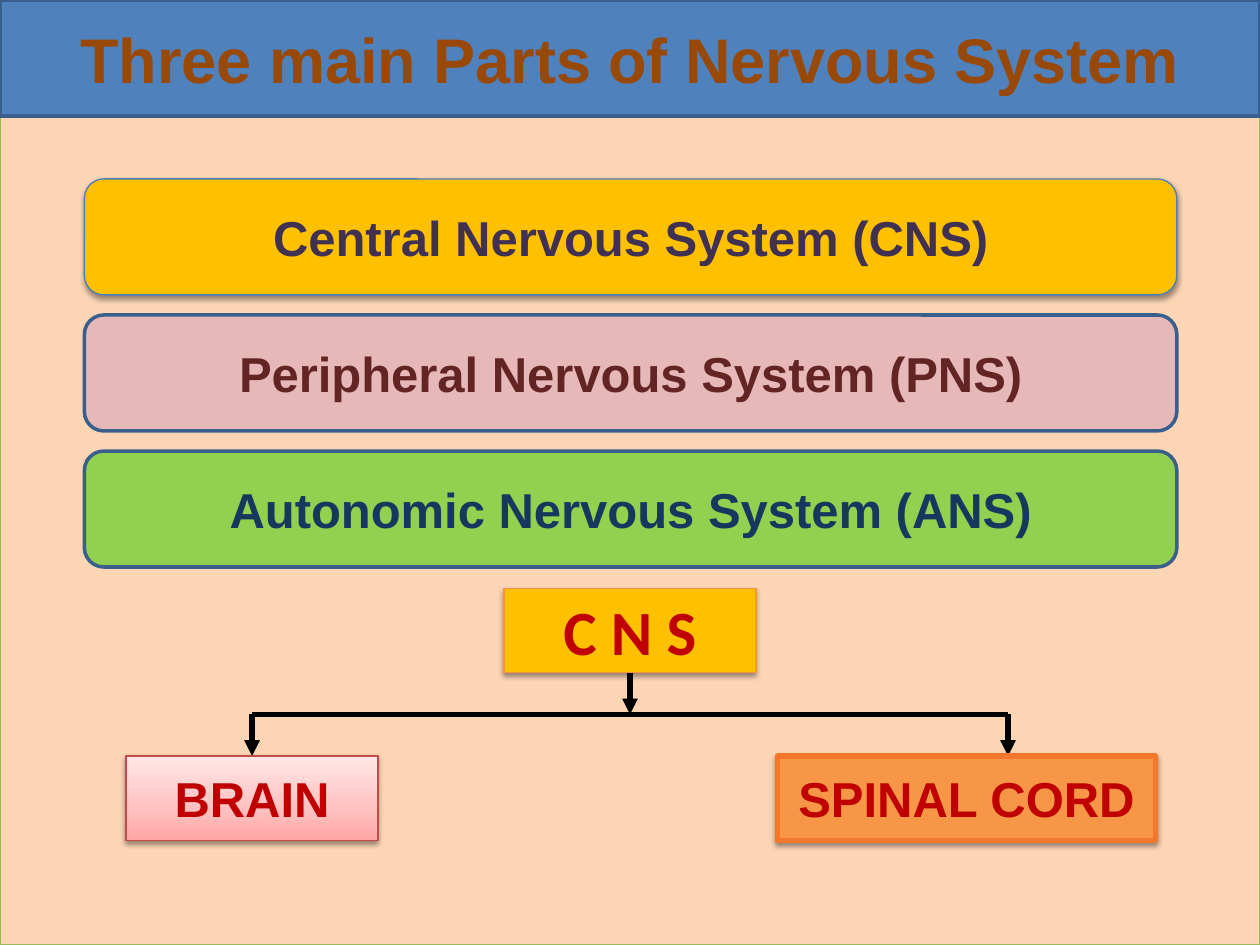
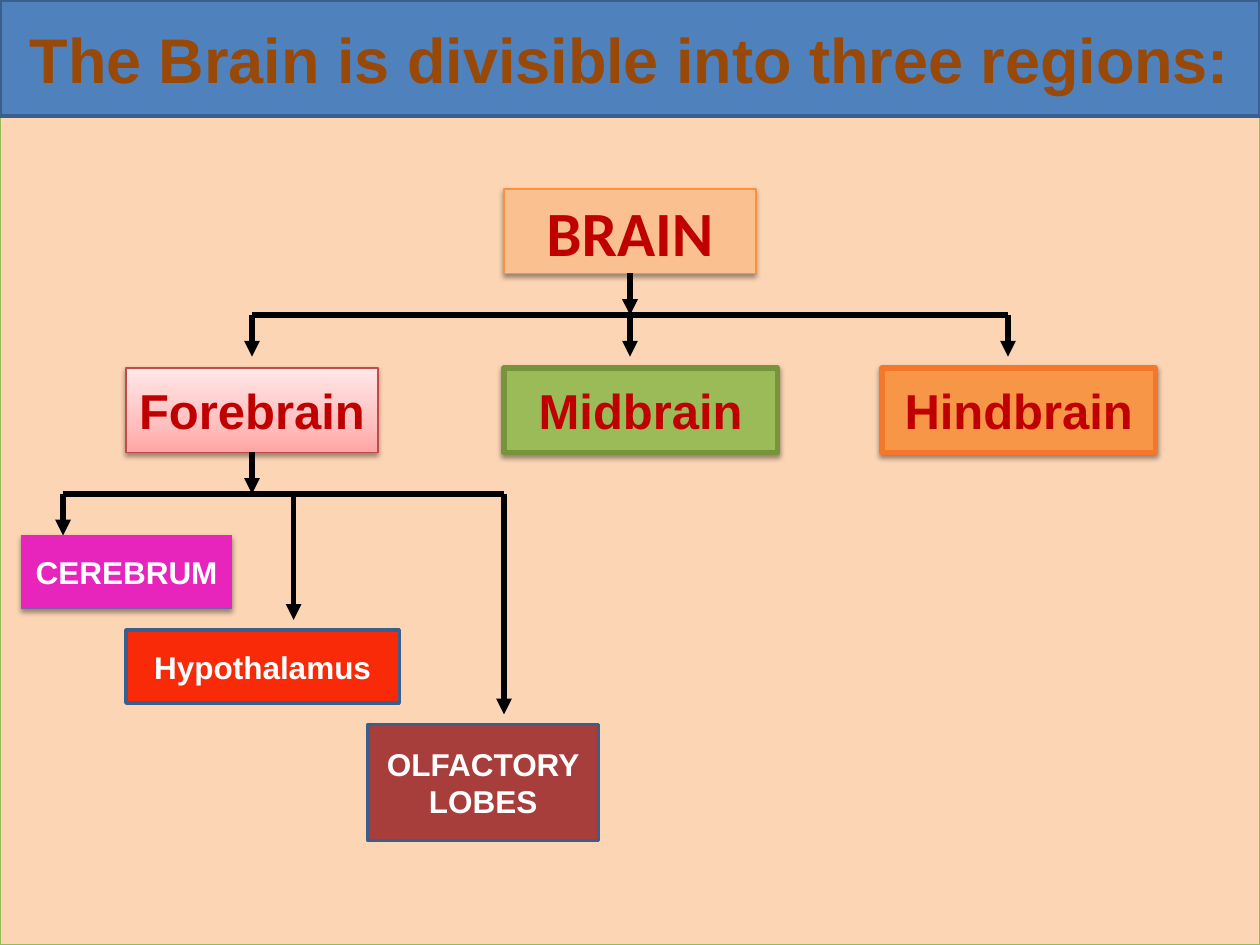
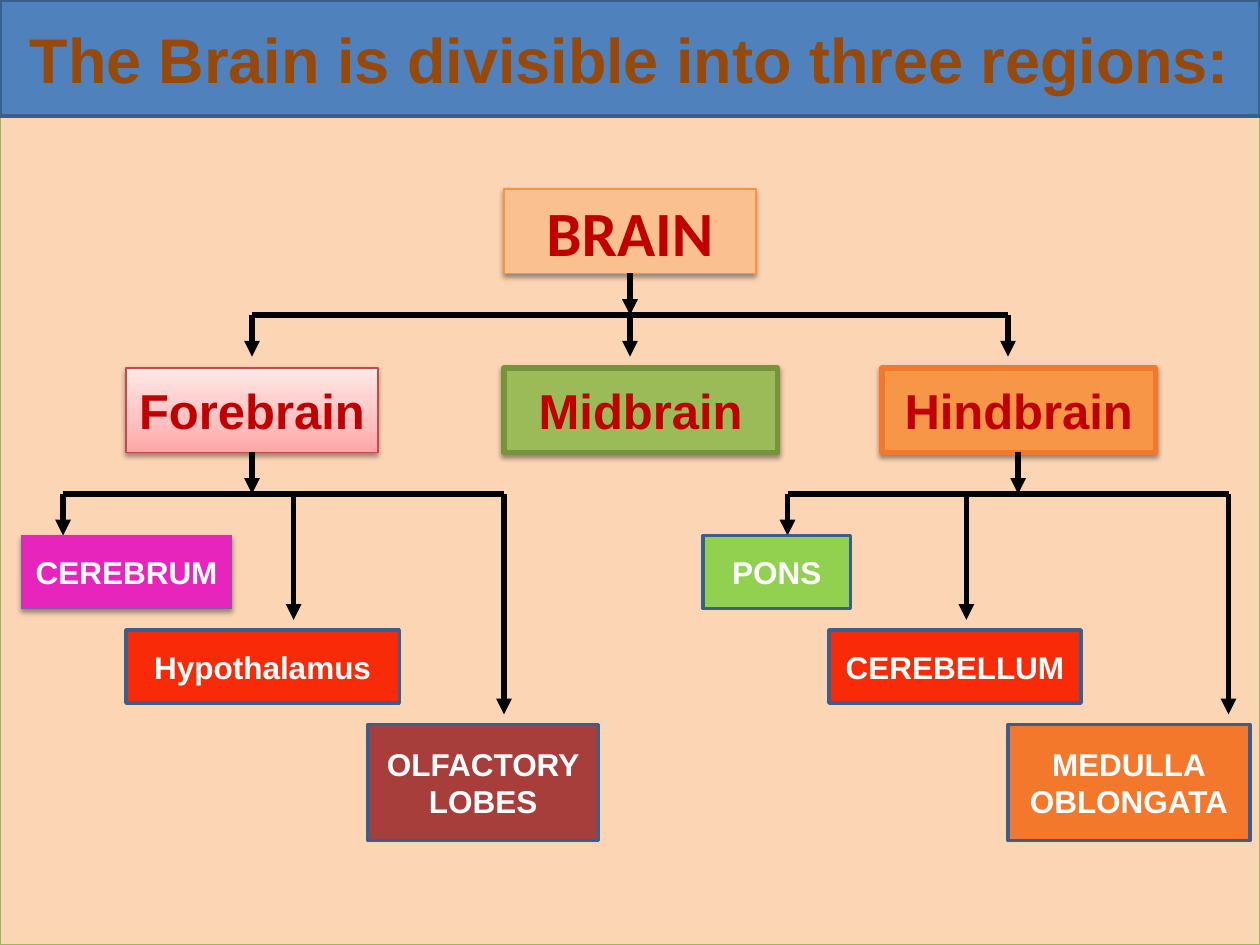
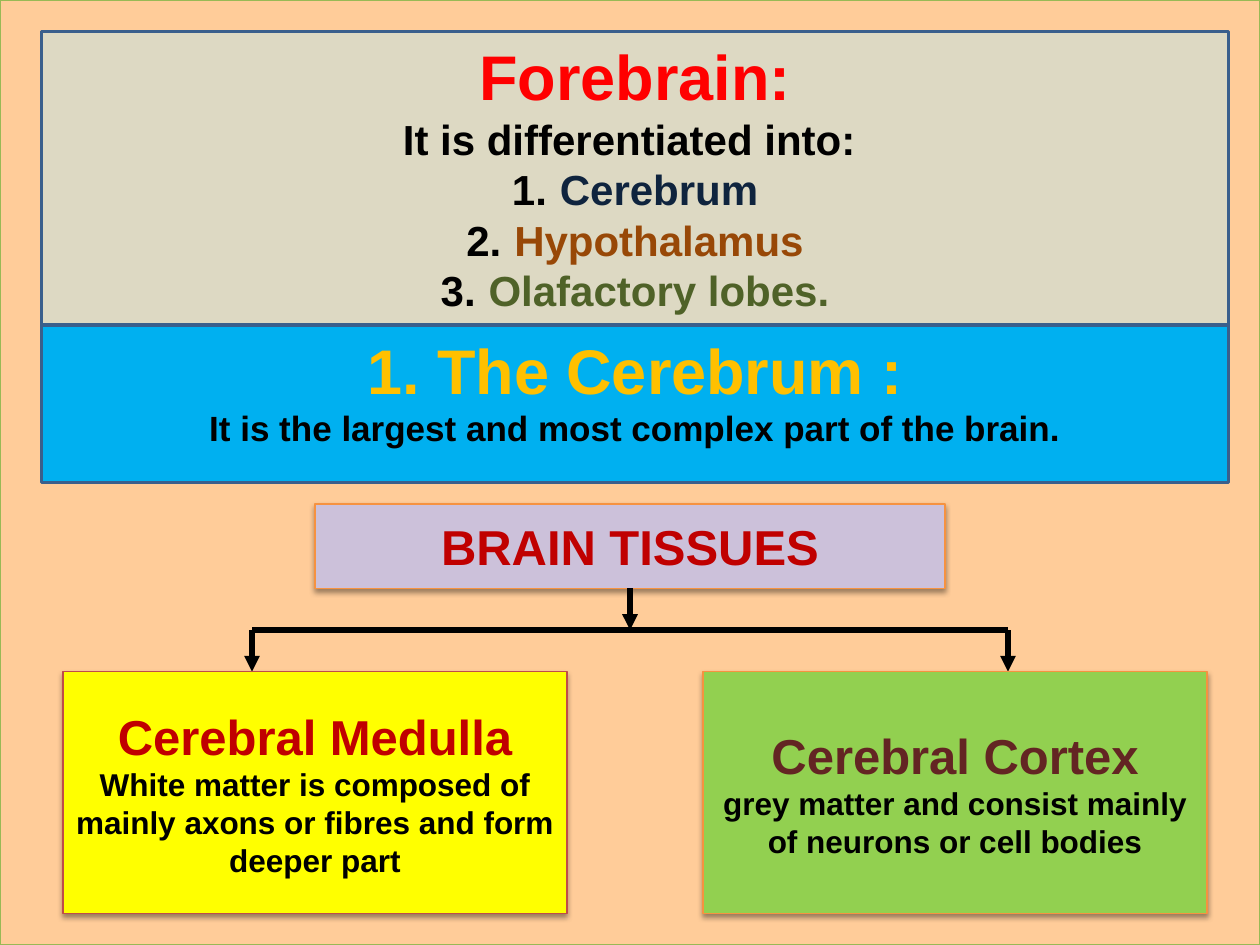
from lxml import etree
from pptx import Presentation
from pptx.dml.color import RGBColor
from pptx.enum.shapes import MSO_CONNECTOR, MSO_SHAPE
from pptx.enum.text import MSO_ANCHOR, MSO_AUTO_SIZE, PP_ALIGN
from pptx.oxml.ns import qn
from pptx.util import Inches, Pt

RECT, ROUND = MSO_SHAPE.RECTANGLE, MSO_SHAPE.ROUNDED_RECTANGLE
STRAIGHT = MSO_CONNECTOR.STRAIGHT
TOP, MIDDLE = MSO_ANCHOR.TOP, MSO_ANCHOR.MIDDLE
CENTER, NO_FIT = PP_ALIGN.CENTER, MSO_AUTO_SIZE.NONE
TITLE_ONLY, BLANK = 5, 6

BLACK, WHITE, RED, BROWN = "000000", "FFFFFF", "C00000", "984807"
PEACH, GOLD, GREEN, ORANGE, SCARLET = "FCD5B5", "FFC000", "92D050", "F79646", "F82A08"
PINK = ((0, "FFA6A5"), (35, "FFC0BF"), (100, "FFE7E7"))

# Edges: colour, width in points, shadow
NAVY = ("3A5F8C", 2, False)
AMBER = ("F69240", 0.75, True)
ROSE = ("BF4C48", 0.75, True)
LEAF = ("98B955", 0.75, True)
BLUE = ("4B7EBC", 0.75, True)
PLUM = ("7D60A0", 0.75, True)
OLIVE = ("77933C", 3, True)
RUST = ("F4782C", 3, True)

STEP = 0.33


def rgb(code):
    return RGBColor.from_string(code)


def child(parent, tag, **attrs):
    node = etree.SubElement(parent, qn(tag))
    for key, value in attrs.items():
        node.set(key, str(value))
    return node


def fade(shape, stops):
    """Fill with a gradient that rises from the bottom edge."""
    shape.fill.gradient()
    shape.fill.gradient_angle = 90
    holder = next(shape._element.spPr.iter(qn("a:gsLst")))
    holder.clear()
    for spot, code in stops:
        child(child(holder, "a:gs", pos=spot * 1000), "a:srgbClr", val=code)


def paint(shape, fill, edge):
    code, width, shaded = edge
    shape.shadow.inherit = False
    if isinstance(fill, str):
        shape.fill.solid()
        shape.fill.fore_color.rgb = rgb(fill)
    else:
        fade(shape, fill)
    shape.line.color.rgb = rgb(code)
    shape.line.width = Pt(width)
    if shaded:
        effect = shape._element.spPr.find(qn("a:effectLst"))
        shadow = child(effect, "a:outerShdw", blurRad=Pt(3.1), dist=Pt(1.6),
                       dir=90 * 60000, rotWithShape=0)
        child(child(shadow, "a:srgbClr", val=BLACK), "a:alpha", val=38000)


def write(shape, paras, face="Arial", anchor=MIDDLE):
    """Fill the shape with paragraphs, each a list of (text, size, colour)."""
    frame = shape.text_frame
    frame.word_wrap, frame.auto_size, frame.vertical_anchor = True, NO_FIT, anchor
    for i, runs in enumerate(paras):
        para = frame.add_paragraph() if i else frame.paragraphs[0]
        para.alignment = CENTER
        for text, size, code in runs:
            run = para.add_run()
            run.text = text
            run.font.color.rgb = rgb(code)
            for key, value in {"name": face, "size": Pt(size), "bold": True}.items():
                setattr(run.font, key, value)


def block(slide, box, fill, edge, paras=(), kind=RECT, **style):
    shape = slide.shapes.add_shape(kind, *map(Inches, box))
    paint(shape, fill, edge)
    write(shape, paras, **style)
    return shape


def label(slide, box, fill, edge, text, size=28, code=RED, **style):
    """A block with one style of text, one paragraph to a line."""
    paras = [[(line, size, code)] for line in text.split("\n")]
    return block(slide, box, fill, edge, paras, **style)


def rule(slide, x1, y1, x2, y2, arrow=True):
    line = slide.shapes.add_connector(STRAIGHT, *map(Inches, (x1, y1, x2, y2)))
    line.line.color.rgb = rgb(BLACK)
    line.line.width = Pt(3)
    props = line._element.spPr
    if arrow:
        child(props.find(qn("a:ln")), "a:tailEnd", type="triangle")
    child(props, "a:effectLst")


def fork(slide, stem, bar, drops):
    """Stem down to a bar at height bar, then drops of (x, length)."""
    rule(slide, drops[0][0], bar, drops[-1][0], bar, arrow=False)
    rule(slide, stem, bar - STEP, stem, bar)
    for x, length in drops:
        rule(slide, x, bar, x, bar + length)


def start(deck, layout, fill=PEACH):
    slide = deck.slides.add_slide(deck.slide_layouts[layout])
    block(slide, (0, 0, 10, 7.5), fill, LEAF)
    return slide


def titled(deck, text):
    """Slide with its title set in a frame across the top."""
    slide = start(deck, TITLE_ONLY)
    title = slide.shapes.title
    slide.shapes._spTree.append(title._element)
    spots = {"left": 0, "top": 0, "width": 10, "height": 0.92}
    for key, value in spots.items():
        setattr(title, key, Inches(value))
    child(child(title._element.spPr, "a:prstGeom", prst="frame"), "a:avLst")
    paint(title, "4F81BD", NAVY)
    write(title, [[(text, 36, BROWN)]])
    return slide


def systems(slide, x, y, wide):
    rows = (
        ("Central Nervous System (CNS)", GOLD, BLUE, "403152"),
        ("Peripheral Nervous System (PNS)", "E6B9B8", NAVY, "632523"),
        ("Autonomic Nervous System (ANS)", GREEN, NAVY, "17375E"),
    )
    for i, (text, fill, edge, code) in enumerate(rows):
        label(slide, (x, y + i * 1.08, wide, 0.92), fill, edge, text,
              code=code, kind=ROUND)


def centre(slide, x, y):
    """The CNS and its two parts, from the left end of the fork."""
    label(slide, (x + 2, y, 2, 0.67), GOLD, AMBER, "C N S", 36, face="Calibri")
    fork(slide, x + 3, y + 1, [(x, STEP), (x + 6, STEP)])
    label(slide, (x - 1, y + 1.33, 2, 0.67), PINK, ROSE, "BRAIN")
    label(slide, (x + 4.17, y + 1.33, 3, 0.67), ORANGE, RUST, "SPINAL CORD")


def regions(slide, x, y):
    """The brain and its three regions, from the left end of the fork."""
    label(slide, (x + 2, y, 2, 0.67), "FAC090", AMBER, "BRAIN", 36, face="Calibri")
    fork(slide, x + 3, y + 1, [(x + i * 3, STEP) for i in range(3)])
    parts = (
        ("Forebrain", 2, PINK, ROSE),
        ("Midbrain", 2.17, "9BBB59", OLIVE),
        ("Hindbrain", 2.17, ORANGE, RUST),
    )
    for i, (text, wide, fill, edge) in enumerate(parts):
        label(slide, (x - 1 + i * 3, y + 1.42, wide, 0.67), fill, edge, text)


def lobes(slide, x, y, stem, mid, parts):
    """Three parts stepping down, from the left end of the bar."""
    fork(slide, x + stem, y, [(x, STEP), (x + mid, 1), (x + 3.5, 1.75)])
    for i, (text, left, wide, fill, edge) in enumerate(parts):
        high = 0.92 if "\n" in text else 0.58
        label(slide, (x + left, y + STEP + i * 0.75, wide, high), fill, edge,
              text, 18, WHITE)


def brain(deck, hind=False):
    slide = titled(deck, "The Brain is divisible into three regions:")
    regions(slide, 2, 1.5)
    lobes(slide, 0.5, 3.92, 1.5, 1.83, (
        ("CEREBRUM", -0.33, 1.67, "E725BD", PLUM),
        ("Hypothalamus", 0.5, 2.17, SCARLET, NAVY),
        ("OLFACTORY\nLOBES", 2.42, 1.83, "A73E3B", NAVY),
    ))
    if hind:
        lobes(slide, 6.25, 3.92, 1.83, 1.42, (
            ("PONS", -0.67, 1.17, GREEN, NAVY),
            ("CEREBELLUM", 0.33, 2, SCARLET, NAVY),
            ("MEDULLA\nOBLONGATA", 1.75, 1.92, "F4782C", NAVY),
        ))


def notes(slide, x, y, wide):
    """The forebrain list with the cerebrum band under it."""
    items = (("Cerebrum", "0F243E"), ("Hypothalamus", BROWN),
             ("Olafactory lobes.", "4F6228"))
    paras = [[("Forebrain:", 36, "FF0000")],
             [("It is differentiated into: ", 24, BLACK)]]
    paras += [[(f"{i}.", 24, BLACK), (f"\t{text}", 24, code)]
              for i, (text, code) in enumerate(items, 1)]
    shape = block(slide, (x, y, wide, 2.33), "DDD9C3", NAVY, paras, anchor=TOP)
    for para in shape.text_frame.paragraphs[2:]:
        props = para._p.get_or_add_pPr()
        props.set("marL", str(Inches(0.38)))
        props.set("indent", str(Inches(-0.38)))
    block(slide, (x, y + 2.33, wide, 1.25), "00B0F0", NAVY, [
        [("1. The Cerebrum :", 36, GOLD)],
        [("It is the largest and most complex part of the brain.", 20, BLACK)],
    ], anchor=TOP)


def tissues(slide, x, y):
    label(slide, (x + 2, y, 5, 0.67), "CCC1DA", AMBER, "BRAIN TISSUES")
    fork(slide, x + 4.5, y + 1, [(x + 1.5, STEP), (x + 7.5, STEP)])
    cards = (
        (0, "FFFF00", ROSE, "Cerebral Medulla", RED,
         "White matter is composed of mainly axons or fibres and form deeper part"),
        (5.08, GREEN, AMBER, "Cerebral Cortex", "632523",
         "grey matter and consist mainly of neurons or cell bodies"),
    )
    for left, fill, edge, head, code, body in cards:
        block(slide, (x + left, y + 1.33, 4, 1.92), fill, edge,
              [[(head, 28, code)], [(body, 18, BLACK)]])


def main():
    deck = Presentation()
    deck.slide_width, deck.slide_height = Inches(10), Inches(7.5)

    slide = titled(deck, "Three main Parts of Nervous System")
    systems(slide, 0.67, 1.42, 8.67)
    centre(slide, 2, 4.67)

    brain(deck)
    brain(deck, hind=True)

    slide = start(deck, BLANK, "FFCC99")
    notes(slide, 0.33, 0.25, 9.42)
    tissues(slide, 0.5, 4)

    deck.save("out.pptx")


if __name__ == "__main__":
    main()
